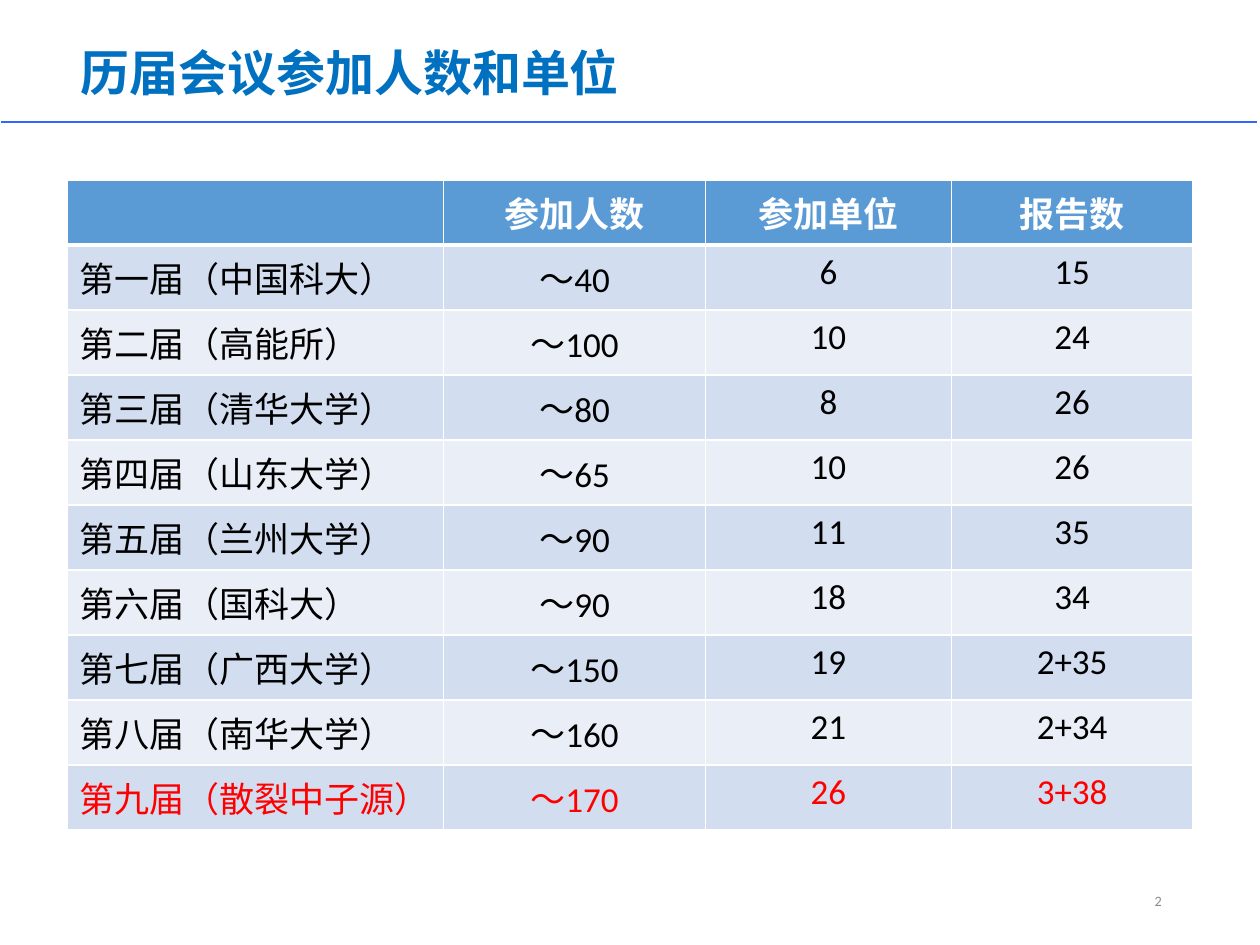
from lxml.etree import SubElement
from pptx import Presentation
from pptx.dml.color import RGBColor
from pptx.enum.shapes import MSO_CONNECTOR
from pptx.enum.text import MSO_ANCHOR, MSO_AUTO_SIZE, PP_ALIGN
from pptx.oxml.ns import qn
from pptx.util import Inches, Pt

# Content
TITLE = "历届会议参加人数和单位"
PAGE = "2"
HEAD = ("", "参加人数", "参加单位", "报告数")
ROWS = [
    ("第一届（中国科大）", "～40", "6", "15"),
    ("第二届（高能所）", "～100", "10", "24"),
    ("第三届（清华大学）", "～80", "8", "26"),
    ("第四届（山东大学）", "～65", "10", "26"),
    ("第五届（兰州大学）", "～90", "11", "35"),
    ("第六届（国科大）", "～90", "18", "34"),
    ("第七届（广西大学）", "～150", "19", "2+35"),
    ("第八届（南华大学）", "～160", "21", "2+34"),
    ("第九届（散裂中子源）", "～170", "26", "3+38"),
]
COLS = (2.99, 2.08, 1.95, 1.92)
LEFT, TOP, HIGH = 0.53, 1.43, 5.16
HUES = {
    "title": "0070C0", "rule": "3366FF", "page": "8C8C8C",
    "head": "5B9BD5", "odd": "D2DEEF", "even": "EAEFF7",
    "white": "FFFFFF", "text": "000000", "latest": "FF0000",
}


def hue(name):
    return RGBColor.from_string(HUES[name])


def write(para, text, size, tone, bold=False, face="Calibri"):
    run = para.add_run()
    run.text = text
    font = run.font
    font.name, font.size, font.bold = face, Pt(size), bold
    font.color.rgb = hue(tone)


def border(cell, base):
    props = cell._tc.get_or_add_tcPr()
    for side, wide in (("L", 1), ("R", 1), ("T", 1), ("B", base)):
        line = SubElement(props, qn("a:ln" + side), w=str(Pt(wide)))
        fill = SubElement(line, qn("a:solidFill"))
        SubElement(fill, qn("a:srgbClr"), val=HUES["white"])


deck = Presentation()
deck.slide_width, deck.slide_height = Inches(10), Inches(7.5)
slide = deck.slides.add_slide(deck.slide_layouts[5])
shapes = slide.shapes

# Title
title = shapes.title
title.left, title.top = Inches(0.54), Inches(0.29)
title.width, title.height = Inches(4.54), Inches(0.57)
frame = title.text_frame
frame.word_wrap = False
frame.auto_size = MSO_AUTO_SIZE.NONE
frame.vertical_anchor = MSO_ANCHOR.TOP
para = frame.paragraphs[0]
para.alignment = PP_ALIGN.LEFT
write(para, TITLE, 28, "title", True, "Times New Roman")

# Rule below the title
rule = shapes.add_connector(MSO_CONNECTOR.STRAIGHT, Inches(0.01), Inches(0.97),
                            Inches(9.98), Inches(0.97))
rule.line.color.rgb = hue("rule")
rule.line.width = Pt(1)
SubElement(rule._element.spPr, qn("a:effectLst"))

# Table
grid = [HEAD] + ROWS
table = shapes.add_table(len(grid), len(COLS), Inches(LEFT), Inches(TOP),
                         Inches(sum(COLS)), Inches(HIGH)).table
for col, wide in zip(table.columns, COLS):
    col.width = Inches(wide)
for r, row in enumerate(grid):
    table.rows[r].height = Inches(HIGH / len(grid))
    top = r == 0
    band = "head" if top else "odd" if r % 2 else "even"
    tone = "white" if top else "latest" if r == len(ROWS) else "text"
    for c, text in enumerate(row):
        cell = table.cell(r, c)
        border(cell, 3 if top else 1)
        cell.fill.solid()
        cell.fill.fore_color.rgb = hue(band)
        para = cell.text_frame.paragraphs[0]
        para.alignment = PP_ALIGN.CENTER if c else PP_ALIGN.LEFT
        para.space_before = para.space_after = Pt(6)
        if text:
            write(para, text, 20, tone, top)

# Page number
box = shapes.add_textbox(Inches(7.07), Inches(6.95), Inches(2.25), Inches(0.4))
frame = box.text_frame
frame.word_wrap = True
frame.vertical_anchor = MSO_ANCHOR.MIDDLE
para = frame.paragraphs[0]
para.alignment = PP_ALIGN.RIGHT
write(para, PAGE, 8.2, "page")

deck.save("out.pptx")
